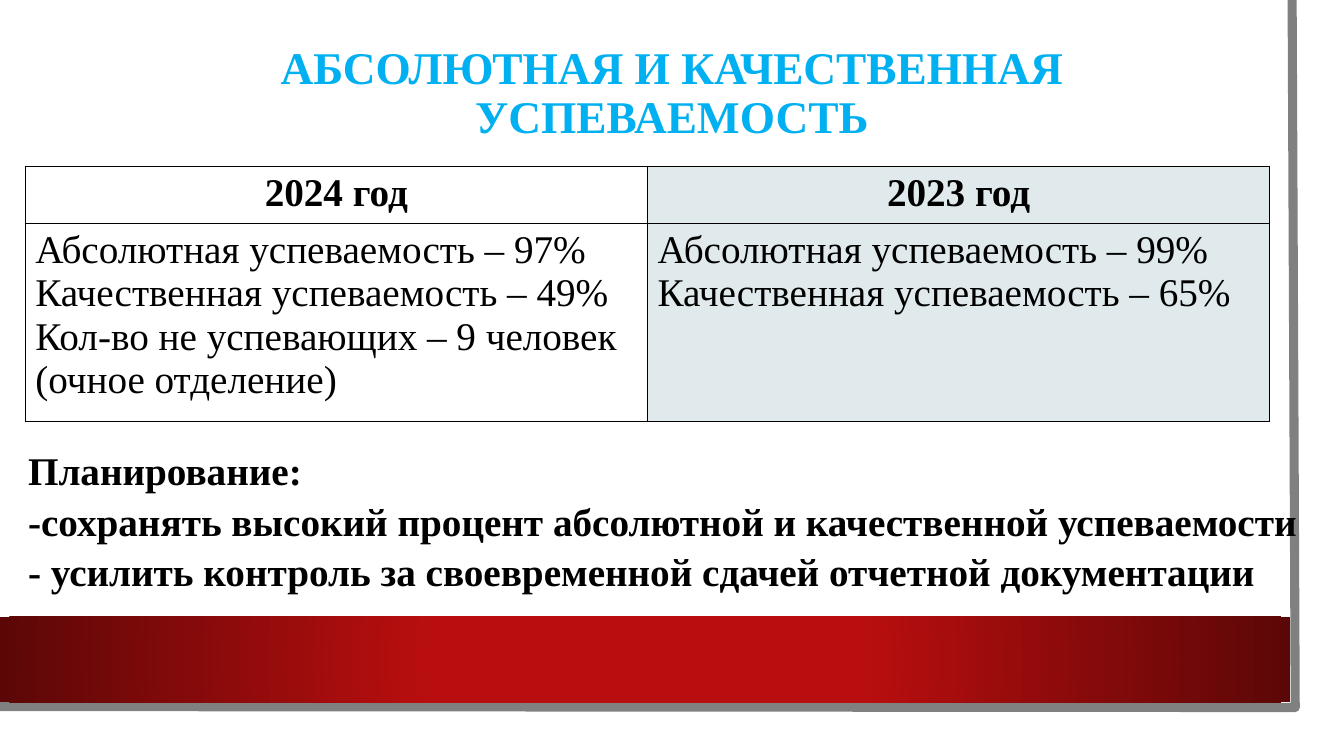
from lxml import etree
from pptx import Presentation
from pptx import util as u
from pptx.dml.color import RGBColor
from pptx.enum import shapes, text
from pptx.oxml import ns

Pt = u.Pt
MID = text.PP_ALIGN.CENTER
LEFT = text.PP_ALIGN.LEFT


def color(code):
    return RGBColor.from_string(code)


def sub(node, tag, **attrs):
    return etree.SubElement(node, ns.qn(tag), **attrs)


class Deck:
    font = "Times New Roman"
    size = 28
    ink = "000000"
    tint = "E0EAEC"

    def __init__(self):
        self.prs = Presentation()
        self.prs.slide_width, self.prs.slide_height = Pt(960), Pt(540)
        self.slide = self.prs.slides.add_slide(self.prs.slide_layouts[6])
        self.items = self.slide.shapes

    def style(self, frame, align=LEFT, bold=True, size=None, ink=None, lead=None):
        for para in frame.paragraphs:
            para.alignment = align
            if lead:
                para.line_spacing = lead
            for run in para.runs:
                run.font.name = self.font
                run.font.size = Pt(size or self.size)
                run.font.bold = bold
                run.font.color.rgb = color(ink or self.ink)

    def rect(self, x, y, w, h):
        box = self.items.add_shape(shapes.MSO_SHAPE.RECTANGLE, Pt(x), Pt(y), Pt(w), Pt(h))
        box.shadow.inherit = False
        box.line.fill.background()
        return box

    def page(self, x, y, w, h):
        fill = self.rect(x, y, w, h).fill
        fill.solid()
        fill.fore_color.rgb = color("FFFFFF")

    def band(self, x, y, w, h, stops):
        box = self.rect(x, y, w, h)
        box.fill.gradient()
        for stop, (pos, code) in zip(box.fill.gradient_stops, stops):
            stop.position = pos
            stop.color.rgb = color(code)
        # Radial gradient from the centre
        grad = box.element.spPr.find(ns.qn("a:gradFill"))
        grad.remove(grad.find(ns.qn("a:lin")))
        ring = etree.Element(ns.qn("a:path"), path="circle")
        sub(ring, "a:fillToRect", l="50000", t="50000", r="50000", b="50000")
        grad.find(ns.qn("a:gsLst")).addnext(ring)

    def edge(self, points, width, code):
        start, *rest = [(Pt(x), Pt(y)) for x, y in points]
        pen = self.items.build_freeform(*start)
        pen.add_line_segments(rest, close=False)
        path = pen.convert_to_shape()
        path.shadow.inherit = False
        path.fill.background()
        path.line.width = Pt(width)
        path.line.color.rgb = color(code)

    def label(self, x, y, w, h, words, anchor=text.MSO_ANCHOR.TOP, **look):
        frame = self.items.add_textbox(Pt(x), Pt(y), Pt(w), Pt(h)).text_frame
        frame.word_wrap = True
        frame.vertical_anchor = anchor
        frame.text = words
        self.style(frame, **look)

    def border(self, cell):
        props = cell._tc.get_or_add_tcPr()
        for i, side in enumerate(("L", "R", "T", "B")):
            line = etree.Element(ns.qn("a:ln" + side), w=str(Pt(1)))
            sub(sub(line, "a:solidFill"), "a:srgbClr", val=self.ink)
            props.insert(i, line)

    def table(self, x, y, wide, highs, rows):
        cols = len(rows[0])
        grid = self.items.add_table(len(rows), cols, Pt(x), Pt(y), Pt(wide), Pt(sum(highs))).table
        for r, (high, row) in enumerate(zip(highs, rows)):
            grid.rows[r].height = Pt(high)
            for c, words in enumerate(row):
                cell = grid.cell(r, c)
                cell.text = words
                head = r == 0
                self.style(cell.text_frame, MID if head else LEFT, bold=head)
                cell.fill.solid()
                cell.fill.fore_color.rgb = color(self.tint if c else "FFFFFF")
                self.border(cell)


def main():
    deck = Deck()

    # Sheet with grey edge and red band
    deck.page(0, 0, 943, 523.5)
    deck.edge([(923, 0), (925.2, 505.4), (-2, 504.7)], 6.5, "808080")
    deck.band(0, 440.6, 921.6, 61.2, [(0.34, "B80E0F"), (1, "5C0707")])

    # Title
    deck.label(66, 27.5, 828, 80, "АБСОЛЮТНАЯ И КАЧЕСТВЕННАЯ УСПЕВАЕМОСТЬ",
               text.MSO_ANCHOR.MIDDLE, align=MID, size=32.4, ink="00B0F0", lead=0.9)

    # Results by year
    deck.table(18, 118.8, 889, [38.5, 131.5], [
        ["2024 год", "2023 год"],
        ["Абсолютная успеваемость – 97%\nКачественная успеваемость – 49%\n"
         "Кол-во не успевающих – 9 человек (очное отделение)",
         "Абсолютная успеваемость – 99%\nКачественная успеваемость – 65%"],
    ])

    # Plans
    deck.label(13, 312.5, 931, 108.7,
               "Планирование:\n"
               "-сохранять высокий процент абсолютной и качественной успеваемости\n"
               "- усилить контроль за своевременной сдачей отчетной документации",
               lead=1.08)

    deck.prs.save("out.pptx")


if __name__ == "__main__":
    main()
